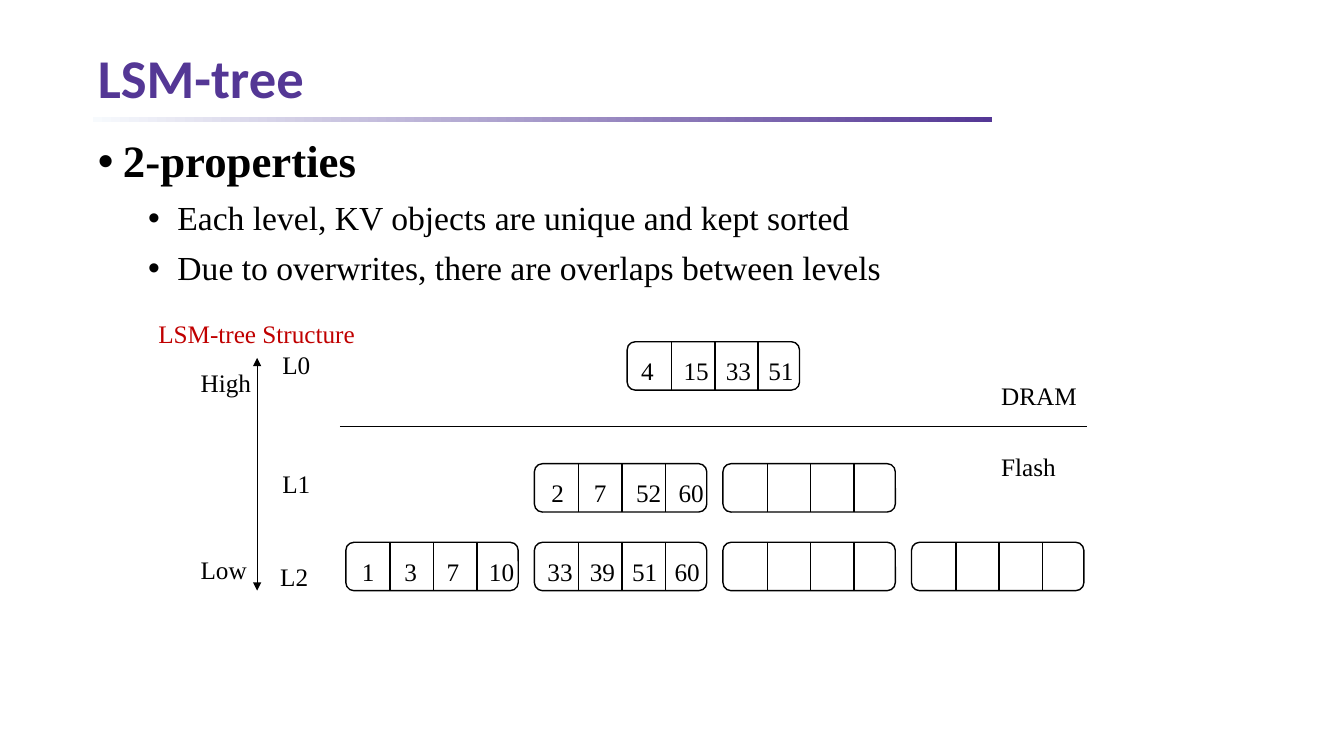
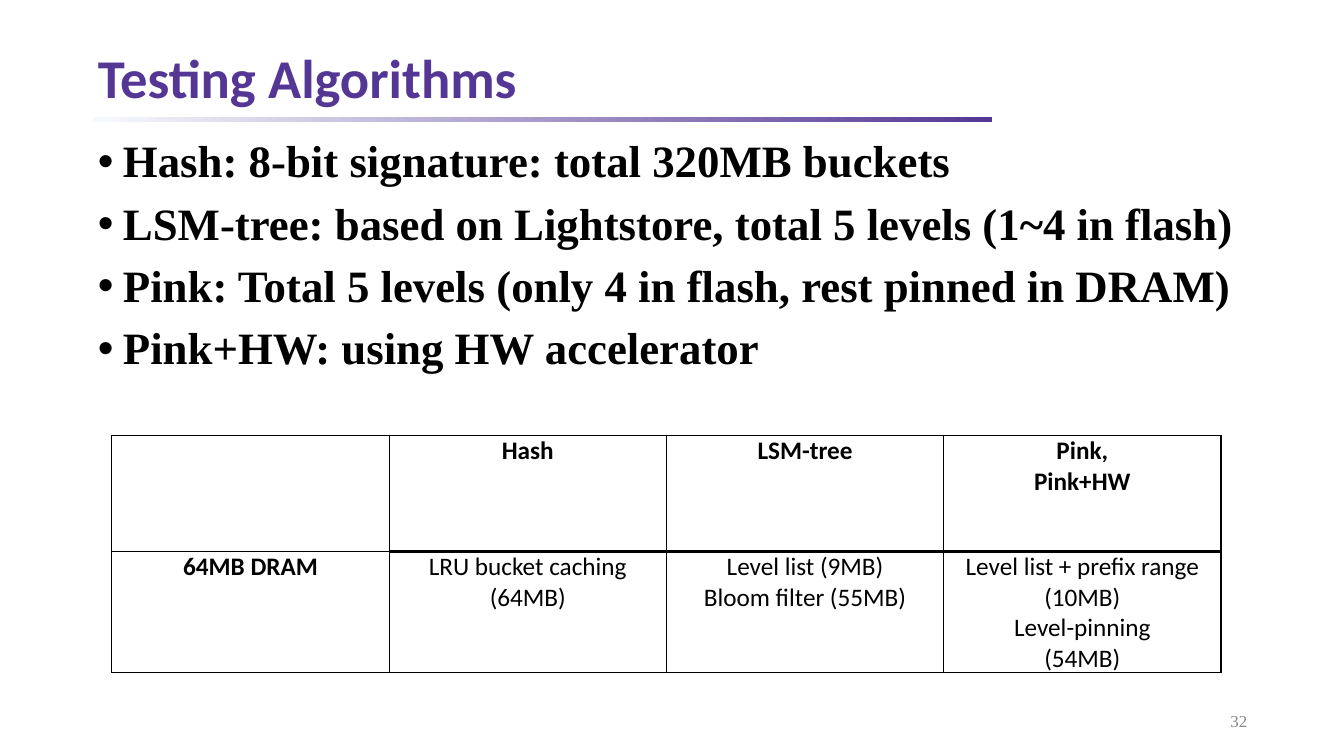
from dataclasses import dataclass

from lxml.etree import SubElement
from pptx import Presentation
from pptx.dml.color import RGBColor
from pptx.enum.shapes import MSO_CONNECTOR as Connector, MSO_SHAPE as Shape
from pptx.enum.text import MSO_ANCHOR as Anchor, MSO_AUTO_SIZE as AutoSize, PP_ALIGN as Align
from pptx.oxml.ns import qn
from pptx.util import Pt

PX = 9144  # 100 px to the inch


@dataclass(frozen=True)
class Theme:
    purple: RGBColor = RGBColor(0x54, 0x37, 0x95)
    pale: RGBColor = RGBColor(0xF7, 0xFA, 0xFD)
    black: RGBColor = RGBColor(0, 0, 0)
    white: RGBColor = RGBColor(255, 255, 255)
    red: RGBColor = RGBColor(0xC0, 0, 0)
    gray: RGBColor = RGBColor(0x88, 0x88, 0x88)
    heading_font: str = "Calibri"
    body_font: str = "Times New Roman"
    title_size: Pt = Pt(39)
    bullet_sizes: tuple = (Pt(32), Pt(24))
    label_size: Pt = Pt(18)
    number_size: Pt = Pt(12)


THEME = Theme()
BULLET_INDENTS = ((25, -25), (79, -29))  # left margin and first line, per level

presentation = Presentation()
presentation.slide_width = 1333 * PX
presentation.slide_height = 750 * PX


def add_label(slide, text, left, top, width, height=38, size=THEME.label_size, color=THEME.black):
    box = slide.shapes.add_textbox(left * PX, top * PX, width * PX, height * PX)
    frame = box.text_frame
    frame.margin_left = frame.margin_right = frame.margin_top = frame.margin_bottom = 5 * PX
    frame.text = text
    font = frame.paragraphs[0].font
    font.name, font.size, font.color.rgb = THEME.body_font, size, color
    return frame


def start_slide(title, bullets):
    """Add a slide with the shared title, rule and a list of (level, text) bullets."""
    slide = presentation.slides.add_slide(presentation.slide_layouts[5])

    rule = slide.shapes.add_shape(Shape.RECTANGLE, 92 * PX, 116 * PX, 892 * PX, 5 * PX)
    rule.shadow.inherit = False
    rule.line.fill.background()
    rule.fill.gradient()
    rule.fill.gradient_angle = 0
    for stop, position, color in zip(rule.fill.gradient_stops, (0, 1), (THEME.pale, THEME.purple)):
        stop.position, stop.color.rgb = position, color

    heading = slide.shapes.title
    heading.left, heading.top, heading.width, heading.height = 92 * PX, 43 * PX, 1150 * PX, 75 * PX
    frame = heading.text_frame
    frame.text = title
    frame.auto_size = AutoSize.NONE
    frame.word_wrap = True
    frame.vertical_anchor = Anchor.MIDDLE
    frame.margin_left = frame.margin_right = frame.margin_top = frame.margin_bottom = 5 * PX
    paragraph = frame.paragraphs[0]
    paragraph.alignment = Align.LEFT
    paragraph.line_spacing = 0.9
    font = paragraph.font
    font.name, font.size, font.bold = THEME.heading_font, THEME.title_size, True
    font.color.rgb = THEME.purple

    frame = add_label(slide, "\n".join(text for _, text in bullets), 92, 133, 1150, 543)
    frame.word_wrap = True
    for index, (paragraph, (level, _)) in enumerate(zip(frame.paragraphs, bullets)):
        paragraph.level = level
        paragraph.line_spacing = 0.9
        if index:
            paragraph.space_before = Pt(10)
        properties = paragraph._p.get_or_add_pPr()
        margin, indent = BULLET_INDENTS[level]
        properties.set("marL", str(margin * PX))
        properties.set("indent", str(indent * PX))
        SubElement(properties, qn("a:buFont")).set("typeface", "Arial")
        SubElement(properties, qn("a:buChar")).set("char", "•")
        font = paragraph.font
        font.name, font.size, font.bold = THEME.body_font, THEME.bullet_sizes[level], level == 0
        font.color.rgb = THEME.black
    return slide


# LSM-tree
slide = start_slide("LSM-tree", [
    (0, "2-properties"),
    (1, "Each level, KV objects are unique and kept sorted"),
    (1, "Due to overwrites, there are overlaps between levels"),
])

NODE_WIDTH, NODE_HEIGHT, CELL_WIDTH, KEY_PITCH = 171, 48, 43, 42
columns = [343 + 187 * index for index in range(4)]
nodes = [  # left, top, inset of the first key, keys
    (622, 339, 9, ("4", "15", "33", "51")),
    (columns[1], 460, 12, ("2", "7", "52", "60")),
    (columns[2], 460, 0, ()),
    (columns[0], 538, 11, ("1", "3", "7", "10")),
    (columns[1], 538, 8, ("33", "39", "51", "60")),
    (columns[2], 538, 0, ()),
    (columns[3], 538, 0, ()),
]
lines = [  # start x, start y, end x, end y, width, arrowheads
    (337, 423, 1078, 423, 0.75, False),
    (255, 355, 255, 586, 0.75, True),
]
for left, top, inset, keys in nodes:
    node = slide.shapes.add_shape(
        Shape.ROUNDED_RECTANGLE, left * PX, top * PX, NODE_WIDTH * PX, NODE_HEIGHT * PX)
    node.shadow.inherit = False
    node.fill.solid()
    node.fill.fore_color.rgb = THEME.white
    node.line.color.rgb = THEME.black
    node.line.width = Pt(1)
    for divider in range(1, 4):
        x = left + 1 + divider * CELL_WIDTH
        lines.append((x, top, x, top + NODE_HEIGHT, 1, False))
    for index, key in enumerate(keys):
        add_label(slide, key, left + inset + index * KEY_PITCH, top + 9, 44)

for start_x, start_y, end_x, end_y, width, arrowheads in lines:
    line = slide.shapes.add_connector(
        Connector.STRAIGHT, start_x * PX, start_y * PX, end_x * PX, end_y * PX)
    line.line.color.rgb = THEME.black
    line.line.width = Pt(width)
    properties = line.element.spPr
    if arrowheads:
        for end in ("a:headEnd", "a:tailEnd"):
            SubElement(properties.find(qn("a:ln")), qn(end)).set("type", "triangle")
    SubElement(properties, qn("a:effectLst"))

for text, left, top, width in (
    ("DRAM", 988, 372, 104),
    ("Flash", 988, 443, 85),
    ("L0", 275, 342, 63),
    ("L1", 275, 460, 63),
    ("L2", 273, 552, 63),
    ("High", 194, 359, 63),
    ("Low", 194, 545, 63),
):
    add_label(slide, text, left, top, width)
add_label(slide, "LSM-tree Structure", 152, 311, 331, color=THEME.red)

# Testing Algorithms
slide = start_slide("Testing Algorithms", [
    (0, "Hash: 8-bit signature: total 320MB buckets"),
    (0, "LSM-tree: based on Lightstore, total 5 levels (1~4 in flash)"),
    (0, "Pink: Total 5 levels (only 4 in flash, rest pinned in DRAM)"),
    (0, "Pink+HW: using HW accelerator"),
])

rows = (
    ("", "Hash", "LSM-tree", "Pink,\nPink+HW"),
    ("64MB DRAM", "LRU bucket caching\n(64MB)", "Level list (9MB)\nBloom filter (55MB)",
     "Level list + prefix range\n(10MB)\nLevel-pinning\n(54MB)"),
)
table = slide.shapes.add_table(2, 4, 111 * PX, 432 * PX, 1100 * PX, 230 * PX).table
table.first_row = table.horz_banding = False
for column in table.columns:
    column.width = 275 * PX
for row_index, texts in enumerate(rows):
    table.rows[row_index].height = 115 * PX
    for column_index, text in enumerate(texts):
        cell = table.cell(row_index, column_index)
        cell.margin_left = cell.margin_right = cell.margin_top = cell.margin_bottom = 0
        shared_edge = "a:lnT" if row_index else "a:lnB"
        for edge in ("a:lnL", "a:lnR", "a:lnT", "a:lnB"):
            thick = edge == shared_edge and column_index > 0
            border = SubElement(cell._tc.get_or_add_tcPr(), qn(edge))
            border.set("w", str(Pt(2 if thick else 1)))
            fill = SubElement(border, qn("a:solidFill"))
            SubElement(fill, qn("a:srgbClr")).set("val", str(THEME.black))
        cell.fill.solid()
        cell.fill.fore_color.rgb = THEME.white
        cell.text = text
        for paragraph in cell.text_frame.paragraphs:
            paragraph.alignment = Align.CENTER
            font = paragraph.font
            font.name, font.size = THEME.heading_font, THEME.label_size
            font.bold = row_index == 0 or column_index == 0
            font.color.rgb = THEME.black

frame = add_label(slide, "32", 1214, 700, 28, 30, THEME.number_size, THEME.gray)
frame.vertical_anchor = Anchor.MIDDLE
frame.paragraphs[0].alignment = Align.RIGHT

presentation.save("out.pptx")
